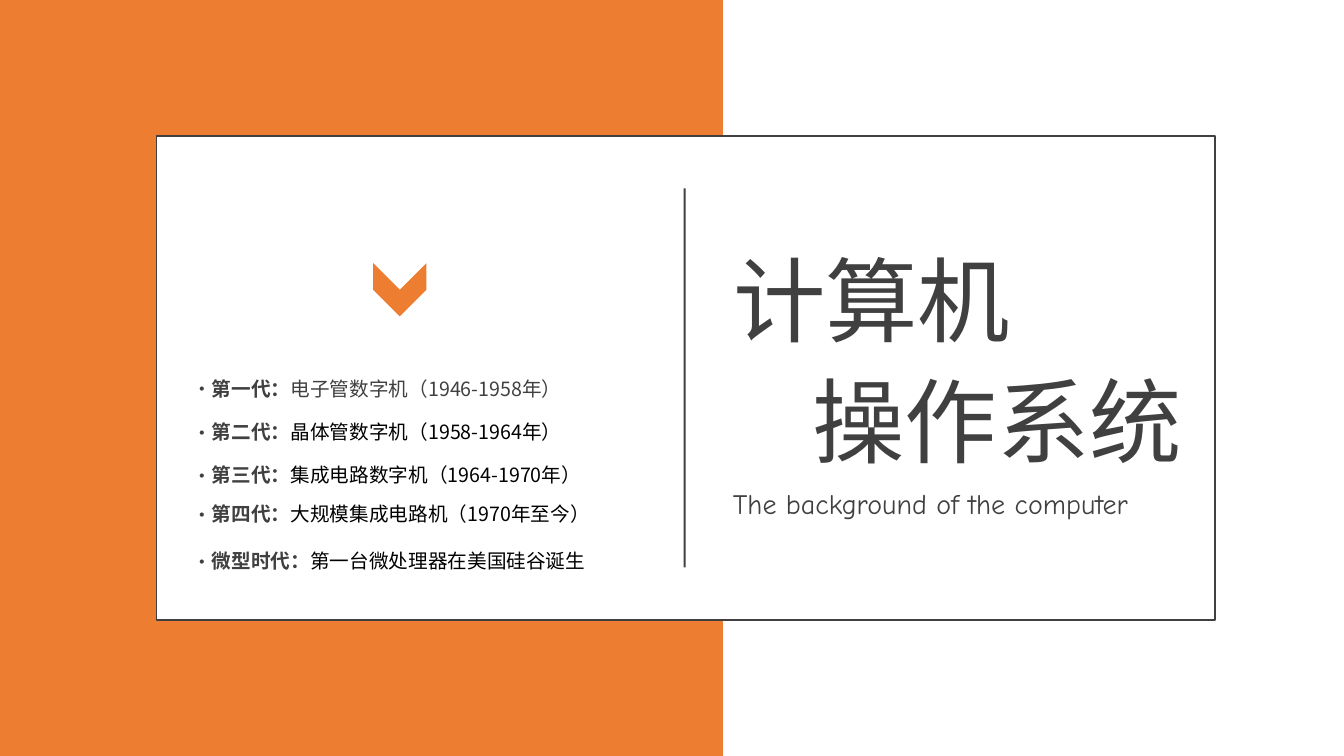
from dataclasses import dataclass

import pptx
import pptx.dml.color
import pptx.enum.shapes
import pptx.enum.text
import pptx.oxml
import pptx.oxml.ns
import pptx.util
from pptx.util import Inches

SHAPES = pptx.enum.shapes.MSO_SHAPE
ALIGN = pptx.enum.text.PP_ALIGN
ANCHOR = pptx.enum.text.MSO_ANCHOR
FIT = pptx.enum.text.MSO_AUTO_SIZE


@dataclass(frozen=True)
class Theme:
    accent: str = "ED7D31"
    paper: str = "FFFFFF"
    ink: str = "404040"
    black: str = "000000"
    title_font: str = "Arial"
    subtitle_font: str = "Comic Neue"
    body_font: str = "Noto Sans CJK SC"
    title_size: int = 66
    subtitle_size: int = 20
    body_size: int = 14
    bullet_indent: float = 0.19


THEME = Theme()

# Top, height, line spacing, label, description, description colour
GENERATIONS = [
    (3.57, 0.41, 1.5, "第一代：", "电子管数字机（1946-1958年）", THEME.ink),
    (4.00, 0.41, 1.5, "第二代：", "晶体管数字机（1958-1964年）", THEME.black),
    (4.43, 0.41, 1.5, "第三代：", "集成电路数字机（1964-1970年）", THEME.black),
    (4.93, 0.34, 1.0, "第四代：", "大规模集成电路机（1970年至今）", THEME.black),
    (5.28, 0.45, 1.5, "微型时代：", "第一台微处理器在美国硅谷诞生", THEME.black),
]


def rgb(value):
    return pptx.dml.color.RGBColor.from_string(value)


def set_all(target, values):
    for name, value in values.items():
        setattr(target, name, value)


def add_block(slide, preset, box, fill, outline=None, rotation=0):
    block = slide.shapes.add_shape(preset, *map(Inches, box))
    block.shadow.inherit = False
    block.rotation = rotation
    block.fill.solid()
    block.fill.fore_color.rgb = rgb(fill)
    if outline:
        block.line.color.rgb = rgb(outline)
        block.line.width = pptx.util.Pt(1)
    else:
        block.line.fill.background()


def add_run(paragraph, text, font, size, color, bold=False):
    run = paragraph.add_run()
    run.text = text
    set_all(run.font, {"name": font, "size": pptx.util.Pt(size), "bold": bold})
    run.font.color.rgb = rgb(color)
    east_asian = pptx.oxml.parse_xml(
        f'<a:ea {pptx.oxml.ns.nsdecls("a")} typeface="{THEME.body_font}"/>')
    run.font._element.append(east_asian)


def format_frame(frame, wrap, line_spacing=1.0):
    """Apply the shared text layout and return the first paragraph."""
    set_all(frame, {
        "word_wrap": wrap,
        "auto_size": FIT.SHAPE_TO_FIT_TEXT,
        "vertical_anchor": ANCHOR.TOP,
    })
    paragraph = frame.paragraphs[0]
    set_all(paragraph, {
        "alignment": ALIGN.LEFT,
        "line_spacing": line_spacing,
        "space_before": pptx.util.Pt(0),
    })
    return paragraph


def add_text_box(slide, box, wrap=True, line_spacing=1.0):
    text_box = slide.shapes.add_textbox(*map(Inches, box))
    return format_frame(text_box.text_frame, wrap, line_spacing)


def add_bullet(paragraph):
    properties = paragraph._p.get_or_add_pPr()
    indent = Inches(THEME.bullet_indent)
    properties.set("marL", str(indent))
    properties.set("indent", str(-indent))
    for tag, attribute in (("buFont", f'typeface="{THEME.body_font}"'),
                           ("buChar", 'char="•"')):
        properties.append(pptx.oxml.parse_xml(
            f'<a:{tag} {pptx.oxml.ns.nsdecls("a")} {attribute}/>'))


def add_title(slide):
    title = slide.shapes.title
    for side, value in zip(("left", "top", "width", "height"),
                           (7.17, 2.36, 2.98, 1.21)):
        setattr(title, side, Inches(value))
    # Bring the title in front of the card
    slide.shapes._spTree.append(title._element)
    first_line = format_frame(title.text_frame, wrap=False)
    second_line = add_text_box(slide, (7.96, 3.56, 3.9, 1.21), wrap=False)
    for line, text in ((first_line, "计算机"), (second_line, "操作系统")):
        add_run(line, text, THEME.title_font, THEME.title_size, THEME.ink)


def add_generation(slide, top, height, spacing, label, description, color):
    entry = add_text_box(slide, (1.81, top, 4.3, height), line_spacing=spacing)
    add_bullet(entry)
    add_run(entry, label, THEME.body_font, THEME.body_size, THEME.ink, bold=True)
    add_run(entry, description, THEME.body_font, THEME.body_size, color)


def main():
    deck = pptx.Presentation()
    deck.slide_width, deck.slide_height = Inches(13.33), Inches(7.5)
    slide = deck.slides.add_slide(deck.slide_layouts.get_by_name("Title Only"))

    add_block(slide, SHAPES.RECTANGLE, (0, 0, 7.17, 7.5), THEME.accent)
    add_block(slide, SHAPES.RECTANGLE, (1.55, 1.35, 10.5, 4.8), THEME.paper,
              outline=THEME.ink)
    add_block(slide, SHAPES.RECTANGLE, (6.78, 1.87, 0.02, 3.76), THEME.ink)

    add_title(slide)
    subtitle = add_text_box(slide, (7.17, 4.78, 4.89, 0.44))
    add_run(subtitle, "The background of the computer", THEME.subtitle_font,
            THEME.subtitle_size, THEME.ink)
    for generation in GENERATIONS:
        add_generation(slide, *generation)
    add_block(slide, SHAPES.CHEVRON, (3.7, 2.61, 0.53, 0.53), THEME.accent,
              rotation=90)

    deck.save("out.pptx")


if __name__ == "__main__":
    main()
